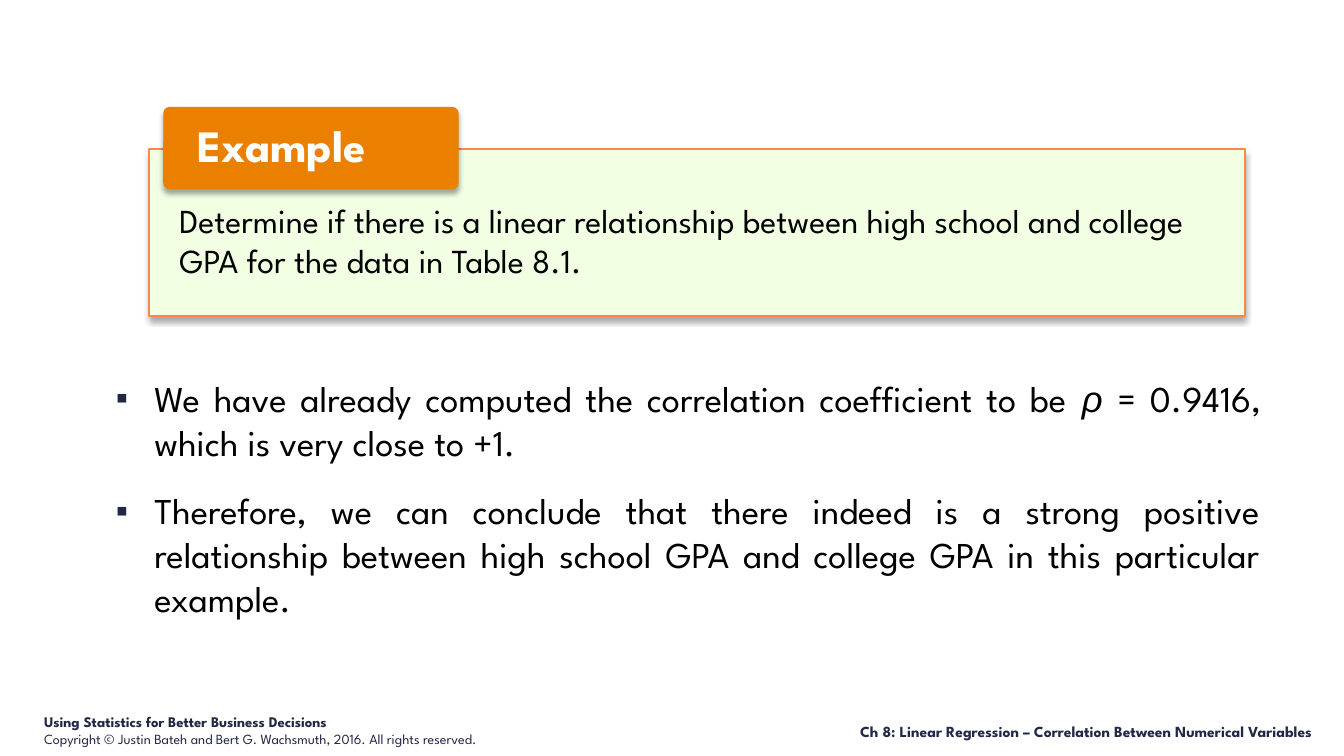
from lxml.etree import SubElement
from pptx import Presentation
from pptx.dml.color import RGBColor
from pptx.enum.shapes import MSO_SHAPE as Shape
from pptx.enum.text import MSO_ANCHOR as Anchor, MSO_AUTO_SIZE as AutoSize, PP_ALIGN as Align
from pptx.oxml.ns import qn
from pptx.util import Inches, Pt

NAVY = RGBColor(0x21, 0x27, 0x45)
BLACK = RGBColor(0x00, 0x00, 0x00)
WHITE = RGBColor(0xFF, 0xFF, 0xFF)
PALE_GREEN = RGBColor(0xF2, 0xFF, 0xE3)
ORANGE = RGBColor(0xEB, 0x80, 0x00)
BORDER_ORANGE = RGBColor(0xFF, 0x86, 0x43)


def add_element(parent, tag, **attributes):
    return SubElement(parent, qn(tag), {key: str(value) for key, value in attributes.items()})


class SlideBuilder:
    """Draws on one slide; each box is left, top, width, height in percent of the slide."""

    font_name = "League Spartan"

    def __init__(self, presentation, layout_index):
        self.width = presentation.slide_width
        self.height = presentation.slide_height
        self.slide = presentation.slides.add_slide(presentation.slide_layouts[layout_index])

    def place(self, box):
        left, top, width, height = box
        return (int(self.width * left / 100), int(self.height * top / 100),
                int(self.width * width / 100), int(self.height * height / 100))

    def style(self, paragraph, size, color, bold=False, align=Align.LEFT):
        paragraph.alignment = align
        font = paragraph.font
        font.name, font.size, font.bold = self.font_name, Pt(size), bold
        font.color.rgb = color

    def text(self, box, lines, align=Align.LEFT, anchor=Anchor.TOP):
        """Each line is a tuple of wording, size and boldness."""
        frame = self.slide.shapes.add_textbox(*self.place(box)).text_frame
        frame.word_wrap = True
        frame.vertical_anchor = anchor
        for index, (wording, size, bold) in enumerate(lines):
            paragraph = frame.add_paragraph() if index else frame.paragraphs[0]
            paragraph.text = wording
            self.style(paragraph, size, NAVY, bold, align)

    def panel(self, kind, box, fill, wording, size, color, margins,
              border=None, bold=False, anchor=Anchor.TOP):
        """Adds a filled shape with a soft shadow below; margins are in inches."""
        shape = self.slide.shapes.add_shape(kind, *self.place(box))
        shape.fill.solid()
        shape.fill.fore_color.rgb = fill
        if border is None:
            shape.line.fill.background()
        else:
            shape.line.color.rgb = border
            shape.line.width = Pt(1)
        self.add_shadow(shape)
        frame = shape.text_frame
        frame.word_wrap = True
        frame.vertical_anchor = anchor
        (frame.margin_left, frame.margin_top,
         frame.margin_right, frame.margin_bottom) = map(Inches, margins)
        paragraph = frame.paragraphs[0]
        paragraph.text = wording
        self.style(paragraph, size, color, bold)
        return shape

    def add_shadow(self, shape):
        shape.shadow.inherit = False
        effects = shape._element.spPr.find(qn("a:effectLst"))
        shadow = add_element(effects, "a:outerShdw", blurRad=Pt(4), dist=Pt(3),
                             dir=90 * 60000, rotWithShape=0)
        add_element(add_element(shadow, "a:srgbClr", val=BLACK), "a:alpha", val=35000)

    def bullets(self, box, items, size):
        """Fills the body placeholder; each item is a list of (wording, is_symbol) runs."""
        title, body = self.slide.shapes.title, self.slide.placeholders[1]
        title._element.getparent().remove(title._element)
        body.left, body.top, body.width, body.height = self.place(box)
        frame = body.text_frame
        frame.auto_size = AutoSize.NONE
        for index, runs in enumerate(items):
            paragraph = frame.add_paragraph() if index else frame.paragraphs[0]
            self.add_bullet(paragraph)
            paragraph.space_before, paragraph.space_after = Pt(6), Pt(12)
            self.style(paragraph, size, BLACK, align=Align.JUSTIFY)
            for wording, is_symbol in runs:
                run = paragraph.add_run()
                run.text = wording
                if is_symbol:
                    run.font.name, run.font.italic = "Arial", True

    def add_bullet(self, paragraph):
        properties = paragraph._p.get_or_add_pPr()
        properties.set("marL", str(Inches(0.45)))
        properties.set("indent", str(Inches(-0.38)))
        add_element(add_element(properties, "a:buClr"), "a:srgbClr", val=NAVY)
        add_element(properties, "a:buSzPct", val=95000)
        add_element(properties, "a:buChar", char="▪")


def main():
    presentation = Presentation()
    presentation.slide_width, presentation.slide_height = Inches(13.33), Inches(7.5)
    builder = SlideBuilder(presentation, layout_index=1)

    builder.text((2.55, 93.6, 39.6, 5.33), [
        ("Using Statistics for Better Business Decisions", 10.5, True),
        ("Copyright © Justin Bateh and Bert G. Wachsmuth, 2016. All rights reserved.", 10, False),
    ])
    builder.panel(
        Shape.RECTANGLE, (11.1, 19.73, 81.55, 22.07), PALE_GREEN,
        "Determine if there is a linear relationship between high school and college "
        "GPA for the data in Table 8.1.",
        24, BLACK, (0.3, 0.5, 0.1, 0), border=BORDER_ORANGE)
    label = builder.panel(
        Shape.ROUNDED_RECTANGLE, (12.15, 14.13, 21.98, 10.93), ORANGE, "Example",
        32, WHITE, (0.32, 0.04, 0.32, 0.04), bold=True, anchor=Anchor.MIDDLE)
    label.adjustments[0] = 0.08
    label.text_frame.paragraphs[0].line_spacing = 0.9
    builder.bullets((7.35, 49.07, 87.25, 40.93), [
        [("We have already computed the correlation coefficient to be ", False),
         ("ρ ", True),
         ("= 0.9416, which is very close to +1. ", False)],
        [("Therefore, we can conclude that there indeed is a strong positive relationship "
          "between high school GPA and college GPA in this particular example.", False)],
    ], size=26)
    builder.text((48.76, 94.8, 49.66, 3.87), [
        ("Ch 8: Linear Regression – Correlation Between Numerical Variables", 11, True),
    ], align=Align.RIGHT, anchor=Anchor.BOTTOM)

    presentation.save("out.pptx")


if __name__ == "__main__":
    main()
